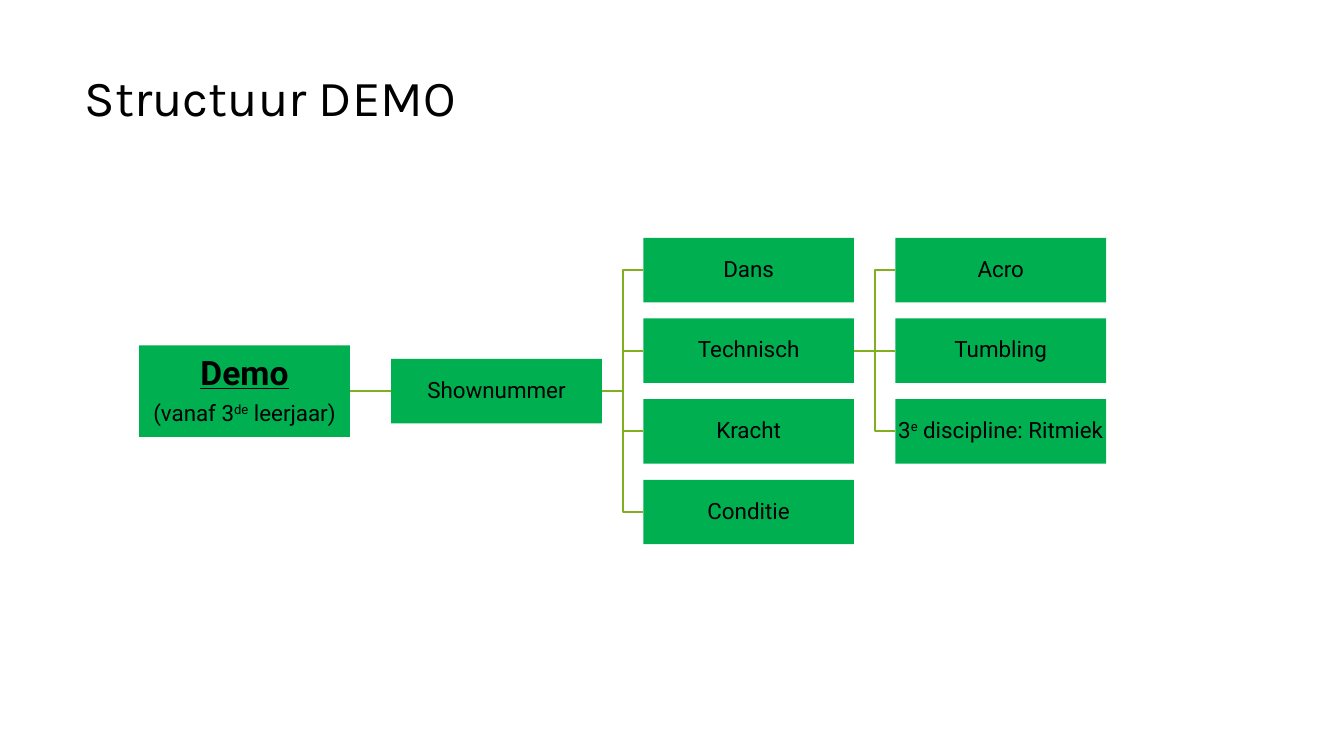
from dataclasses import dataclass

from pptx import Presentation
from pptx.dml.color import RGBColor
from pptx.enum.shapes import MSO_CONNECTOR, MSO_SHAPE
from pptx.enum.text import MSO_ANCHOR, PP_ALIGN
from pptx.oxml import parse_xml
from pptx.oxml.ns import nsdecls
from pptx.util import Inches, Pt


@dataclass(frozen=True)
class Theme:
    ink: RGBColor = RGBColor(0x00, 0x00, 0x00)
    box: RGBColor = RGBColor(0x00, 0xB0, 0x50)
    line: RGBColor = RGBColor(0x81, 0xAF, 0x1F)
    head: str = "Karla"
    body: str = "Roboto"
    title: Pt = Pt(36)
    root: Pt = Pt(24)
    text: Pt = Pt(16)
    rule: Pt = Pt(1.5)


THEME = Theme()

# Grid of the tree, in inches
LEFT, TOP = 1.38, 2.36
COL, ROW = 2.5, 0.8
WIDE, HIGH, TALL = 2.09, 0.64, 0.91

# Name: (column, row, parent); a pair of ^ marks raised text
NODES = {
    "Shownummer": (1, 1.5, "Demo"),
    "Dans": (2, 0, "Shownummer"),
    "Technisch": (2, 1, "Shownummer"),
    "Kracht": (2, 2, "Shownummer"),
    "Conditie": (2, 3, "Shownummer"),
    "Acro": (3, 0, "Technisch"),
    "Tumbling": (3, 1, "Technisch"),
    "3^e^ discipline: Ritmiek": (3, 2, "Technisch"),
}


def style(font, face, size):
    font.name, font.size = face, size
    font.color.rgb = THEME.ink


def add_title(slide, text):
    title = slide.shapes.title
    title.left, title.top = Inches(0.74), Inches(0.67)
    title.width, title.height = Inches(9.4), Inches(1.44)
    frame = title.text_frame
    frame.text = text
    frame.word_wrap = True
    frame.vertical_anchor = MSO_ANCHOR.TOP
    para = frame.paragraphs[0]
    para.alignment = PP_ALIGN.LEFT
    para.line_spacing = 0.9
    style(para.runs[0].font, THEME.head, THEME.title)


def write(para, text):
    """Fill a centred paragraph, raising the parts between ^ marks."""
    para.alignment = PP_ALIGN.CENTER
    para.line_spacing = 0.9
    for i, part in enumerate(text.split("^")):
        run = para.add_run()
        run.text = part
        style(run.font, THEME.body, THEME.text)
        if i % 2:
            run.font._element.set("baseline", "30000")


def add_box(slide, col, row, text, high=HIGH):
    top = TOP + row * ROW - (high - HIGH) / 2
    box = slide.shapes.add_shape(
        MSO_SHAPE.RECTANGLE, Inches(LEFT + col * COL), Inches(top),
        Inches(WIDE), Inches(high))
    box.shadow.inherit = False
    box.fill.solid()
    box.fill.fore_color.rgb = THEME.box
    box.line.fill.background()
    frame = box.text_frame
    frame.word_wrap = True
    frame.vertical_anchor = MSO_ANCHOR.MIDDLE
    frame.margin_left = frame.margin_right = Inches(0.01)
    frame.margin_top = frame.margin_bottom = Inches(0.01)
    write(frame.paragraphs[0], text)
    return box


def add_root(slide):
    box = add_box(slide, 0, 1.5, "Demo", TALL)
    font = box.text_frame.paragraphs[0].runs[0].font
    font.size = THEME.root
    font.bold = font.underline = True
    note = box.text_frame.add_paragraph()
    note.space_before = Pt(7)
    write(note, "(vanaf 3^de^ leerjaar)")
    return box


def add_link(slide, start, end, level):
    kind = MSO_CONNECTOR.STRAIGHT if level else MSO_CONNECTOR.ELBOW
    link = slide.shapes.add_connector(kind, 0, 0, 0, 0)
    link.begin_connect(start, 3)
    link.end_connect(end, 1)
    link.line.color.rgb = THEME.line
    link.line.width = THEME.rule
    link._element.spPr.append(parse_xml(f"<a:effectLst {nsdecls('a')}/>"))


def main():
    deck = Presentation()
    deck.slide_width, deck.slide_height = Inches(13.33), Inches(7.5)
    slide = deck.slides.add_slide(deck.slide_layouts[5])
    add_title(slide, "Structuur DEMO")

    # Boxes, each joined to its parent
    boxes = {"Demo": add_root(slide)}
    rows = {"Demo": 1.5}
    for name, (col, row, parent) in NODES.items():
        boxes[name] = add_box(slide, col, row, name)
        rows[name] = row
        add_link(slide, boxes[parent], boxes[name], row == rows[parent])

    deck.save("out.pptx")


if __name__ == "__main__":
    main()
